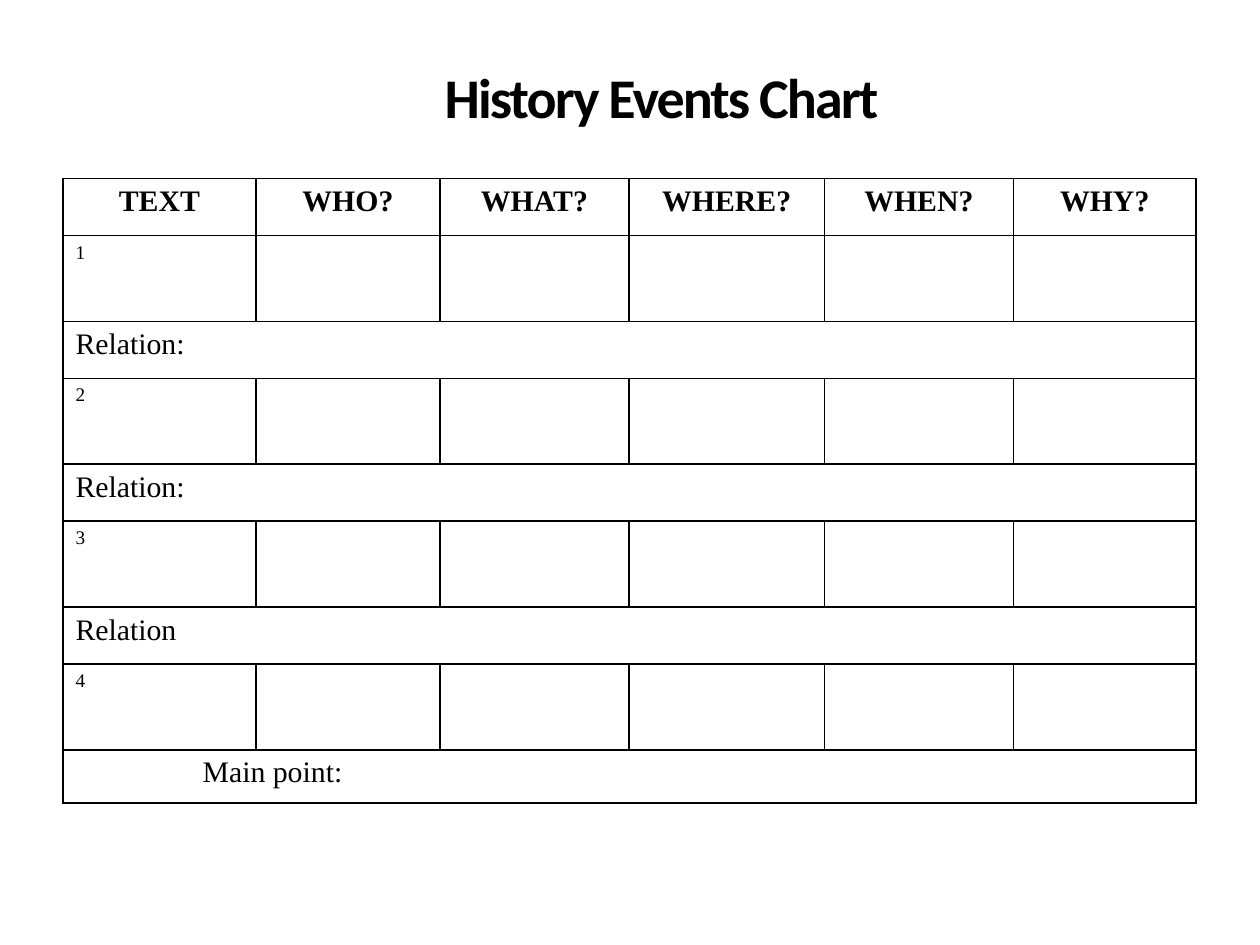
"""Build a one-slide history events chart with a fill-in table."""
from dataclasses import dataclass

from lxml.etree import SubElement
from pptx import Presentation
from pptx.dml.color import RGBColor
from pptx.enum.text import MSO_ANCHOR as Anchor, PP_ALIGN as Align
from pptx.oxml.ns import qn
from pptx.util import Cm, Pt


@dataclass(frozen=True)
class Theme:
    """Colours, fonts and type sizes of the slide."""
    ink: str = "000000"
    title_font: str = "Calibri"
    table_font: str = "Times New Roman"
    title_size: int = 32
    label_size: int = 17
    number_size: int = 11
    border: int = 1


THEME = Theme()
HEADINGS = ["TEXT", "WHO?", "WHAT?", "WHERE?", "WHEN?", "WHY?"]
RELATIONS = ["Relation:", "Relation:", "Relation"]
CLOSING = "Main point:"
COLUMN_WIDTHS = [3.89, 3.71, 3.81, 3.94, 3.81, 3.68]
LABEL_HEIGHT, EVENT_HEIGHT, CLOSING_HEIGHT = 1.15, 1.73, 1.07
HANGING, CLOSING_INDENT = 0.97, 2.56


def add_run(paragraph, text, font, size, bold=False):
    """Append one formatted run to a paragraph."""
    run = paragraph.add_run()
    run.text = text
    run.font.name = font
    run.font.size = Pt(size)
    run.font.bold = bold
    run.font.color.rgb = RGBColor.from_string(THEME.ink)
    return run


def set_title(slide, text):
    """Place and format the title placeholder."""
    title = slide.shapes.title
    title.left, title.top, title.width, title.height = Cm(2.54), Cm(0.76), Cm(21.59), Cm(2.57)
    frame = title.text_frame
    frame.word_wrap = True
    frame.vertical_anchor = Anchor.MIDDLE
    frame.margin_left = frame.margin_right = Cm(0.64)
    frame.margin_top = frame.margin_bottom = Cm(0.64)
    paragraph = frame.paragraphs[0]
    paragraph.alignment = Align.CENTER
    paragraph.line_spacing = 0.85
    run = add_run(paragraph, text, THEME.title_font, THEME.title_size, bold=True)
    run.font._element.set("spc", "-110")


def style_cell(cell):
    """Give a cell four solid borders and no fill."""
    properties = cell._tc.get_or_add_tcPr()
    for side in ("lnL", "lnR", "lnT", "lnB"):
        line = SubElement(properties, qn(f"a:{side}"), w=str(Pt(THEME.border)))
        fill = SubElement(line, qn("a:solidFill"))
        SubElement(fill, qn("a:srgbClr"), val=THEME.ink)
    cell.fill.background()


def write_cell(cell, text, size, bold=False, align=Align.LEFT, left=0, first=0):
    """Write one paragraph into a cell with the given indents."""
    paragraph = cell.text_frame.paragraphs[0]
    paragraph.alignment = align
    properties = paragraph._p.get_or_add_pPr()
    properties.set("marL", str(Cm(left)))
    properties.set("indent", str(Cm(first)))
    add_run(paragraph, text, THEME.table_font, size, bold)


def write_band(table, row, text, left, first=0):
    """Merge a whole row and write its label."""
    band = table.cell(row, 0)
    band.merge(table.cell(row, len(HEADINGS) - 1))
    write_cell(band, text, THEME.label_size, left=left, first=first)


def add_events_table(slide):
    """Add the table of headings, numbered events and bands."""
    bands = RELATIONS + [CLOSING]
    heights = [LABEL_HEIGHT] + [EVENT_HEIGHT, LABEL_HEIGHT] * len(bands)
    heights[-1] = CLOSING_HEIGHT
    frame = slide.shapes.add_table(
        len(heights), len(HEADINGS), Cm(1.27), Cm(3.6),
        Cm(sum(COLUMN_WIDTHS)), Cm(sum(heights)))
    table = frame.table
    table.first_row = table.horz_banding = False
    for column, width in zip(table.columns, COLUMN_WIDTHS):
        column.width = Cm(width)
    for row, height in zip(table.rows, heights):
        row.height = Cm(height)
    for cell in table.iter_cells():
        style_cell(cell)
    for column, heading in enumerate(HEADINGS):
        write_cell(table.cell(0, column), heading, THEME.label_size, bold=True,
                   align=Align.CENTER, left=HANGING, first=-HANGING)
    for number, band in enumerate(bands, start=1):
        write_cell(table.cell(2 * number - 1, 0), str(number), THEME.number_size,
                   left=HANGING, first=-HANGING)
        if band == CLOSING:
            write_band(table, 2 * number, band, CLOSING_INDENT)
        else:
            write_band(table, 2 * number, band, HANGING, -HANGING)


def main():
    """Build and save the presentation."""
    presentation = Presentation()
    presentation.slide_width, presentation.slide_height = Cm(25.4), Cm(19.05)
    slide = presentation.slides.add_slide(presentation.slide_layouts[5])
    set_title(slide, "History Events Chart")
    add_events_table(slide)
    presentation.save("out.pptx")


if __name__ == "__main__":
    main()
